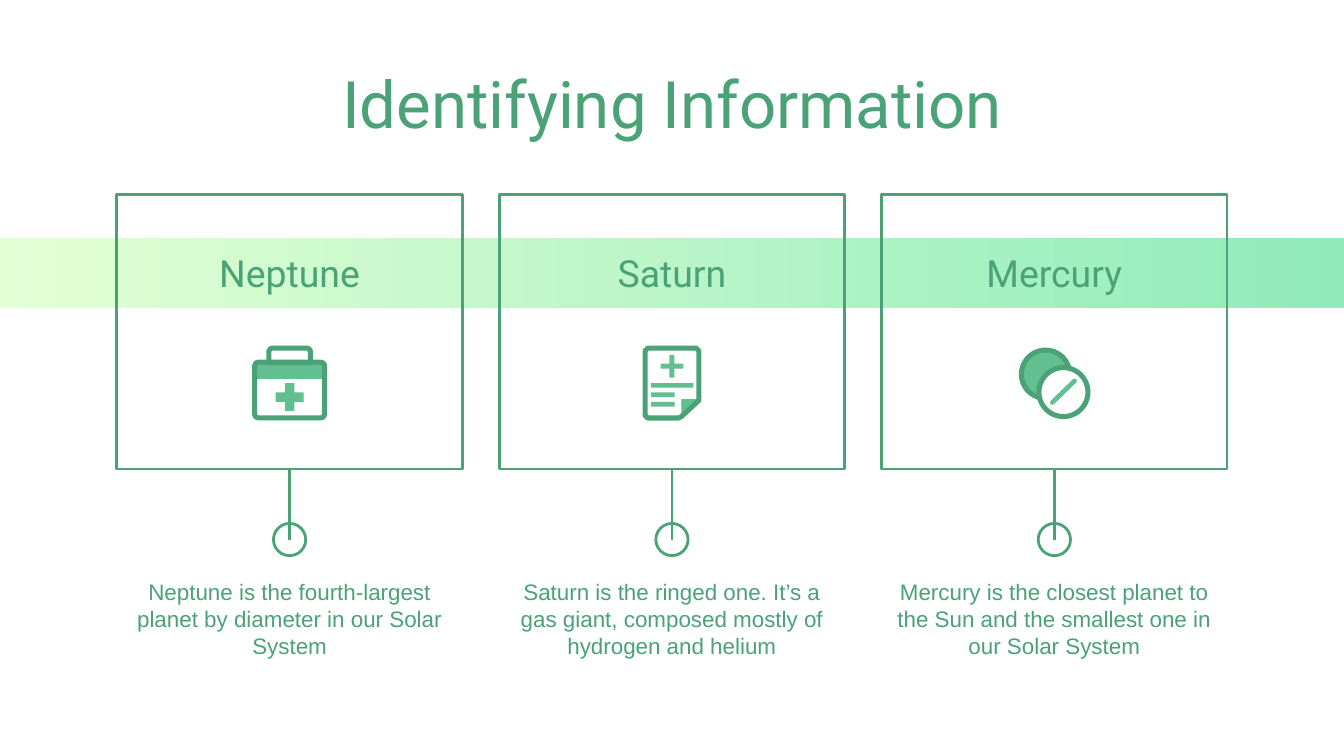
"""Build the Identifying Information slide on a grid of 1000 columns."""
from typing import NamedTuple, Optional

from lxml import etree
from pptx import Presentation
from pptx.dml.color import RGBColor
from pptx.enum.shapes import MSO_CONNECTOR, MSO_SHAPE
from pptx.enum.text import MSO_ANCHOR, PP_ALIGN
from pptx.oxml.ns import qn
from pptx.shapes.autoshape import Shape
from pptx.shapes.shapetree import SlideShapes
from pptx.util import Inches, Pt

DARK = RGBColor(0x4A, 0xA2, 0x76)
MID = RGBColor(0x62, 0xC0, 0x90)
PALE = RGBColor(0xE3, 0xFF, 0xD5)
MINT = RGBColor(0x90, 0xEB, 0xBA)
WHITE = RGBColor(0xFF, 0xFF, 0xFF)

RECT = MSO_SHAPE.RECTANGLE
OVAL = MSO_SHAPE.OVAL
ROUND = MSO_SHAPE.ROUNDED_RECTANGLE
ARCH = MSO_SHAPE.ROUND_2_SAME_RECTANGLE
CROSS = MSO_SHAPE.CROSS
STRAIGHT = MSO_CONNECTOR.STRAIGHT
MIDDLE = MSO_ANCHOR.MIDDLE
CENTER = PP_ALIGN.CENTER

UNIT = Inches(0.01)
WIDE, HIGH = 1000, 562.5
CARD, STEP = 257, 284.5
THIN, THICK = 1.5, 2.7


class Box(NamedTuple):
    """A place on the grid: left, top, width and height."""
    x: float
    y: float
    w: float
    h: float


class Planet(NamedTuple):
    """The heading and text of one card."""
    name: str
    text: str


PLANETS = [
    Planet("Neptune", "Neptune is the fourth-largest planet by diameter in our Solar System"),
    Planet("Saturn", "Saturn is the ringed one. It’s a gas giant, composed mostly of hydrogen and helium"),
    Planet("Mercury", "Mercury is the closest planet to the Sun and the smallest one in our Solar System"),
]


def units(*sides: float) -> list[int]:
    """Turn grid units into slide lengths."""
    return [round(side * UNIT) for side in sides]


def paint(shape: Shape, fill: Optional[RGBColor], line: Optional[RGBColor], width: float) -> None:
    """Set the fill and line of a shape, and drop its shadow."""
    shape.shadow.inherit = False
    if fill is None:
        shape.fill.background()
    else:
        shape.fill.solid()
        shape.fill.fore_color.rgb = fill
    if line is None:
        shape.line.fill.background()
    else:
        shape.line.color.rgb = line
        shape.line.width = Pt(width)


def draw(shapes: SlideShapes, kind: MSO_SHAPE, box: Box, fill: Optional[RGBColor] = None,
         line: Optional[RGBColor] = None, width: float = THIN, bend: Optional[float] = None) -> Shape:
    """Draw a preset shape."""
    shape = shapes.add_shape(kind, *units(*box))
    paint(shape, fill, line, width)
    if bend is not None:
        shape.adjustments[0] = bend
    return shape


def trace(shapes: SlideShapes, points: list[tuple[float, float]], fill: Optional[RGBColor] = None,
          line: Optional[RGBColor] = None) -> None:
    """Draw a closed outline through points."""
    pen = shapes.build_freeform(*points[0], scale=UNIT)
    pen.add_line_segments(points[1:], close=True)
    paint(pen.convert_to_shape(), fill, line, THICK)


def link(shapes: SlideShapes, start: tuple[float, float], end: tuple[float, float],
         color: RGBColor, width: float, cap: str = "flat") -> None:
    """Draw a straight line."""
    line = shapes.add_connector(STRAIGHT, *units(*start, *end))
    line.line.color.rgb = color
    line.line.width = Pt(width)
    props = line._element.spPr
    props.find(qn("a:ln")).set("cap", cap)
    etree.SubElement(props, qn("a:effectLst"))


def write(shapes: SlideShapes, box: Box, text: str, font: str, size: float) -> None:
    """Add a centred text box."""
    frame = shapes.add_textbox(*units(*box)).text_frame
    frame.word_wrap = True
    frame.vertical_anchor = MIDDLE
    frame.margin_left = frame.margin_right = frame.margin_top = frame.margin_bottom = Inches(0.1)
    line = frame.paragraphs[0]
    line.text = text
    line.alignment = CENTER
    line.font.name = font
    line.font.size = Pt(size)
    line.font.color.rgb = DARK


def kit(shapes: SlideShapes, mid: float) -> None:
    """Draw the first aid kit."""
    draw(shapes, RECT, Box(mid - 26, 270, 52, 12), MID)
    draw(shapes, ARCH, Box(mid - 15.5, 259, 31, 11), None, DARK, THICK, 0.25)
    draw(shapes, ROUND, Box(mid - 26, 269.5, 52, 41.5), None, DARK, THICK, 0.07)
    draw(shapes, CROSS, Box(mid - 10.5, 285, 21, 21), MID, bend=0.33)


def sheet(shapes: SlideShapes, mid: float) -> None:
    """Draw the medical report."""
    left, right, top, base = mid - 20.5, mid + 20.5, 259, 311
    trace(shapes, [(mid + 7, 297), (right, 297), (mid + 7, 311)], MID)
    trace(shapes, [(mid + 9, 297), (mid + 11, 297), (mid + 7, 301), (mid + 7, 299)], MID)
    trace(shapes, [(left + 2, top), (right - 2, top), (right, top + 2), (right, 296), (right - 1, 298),
                   (mid + 7, base - 1), (mid + 5, base), (left + 2, base), (left, base - 2),
                   (left, top + 2)], None, DARK)
    for row, width in enumerate((31.5, 17.5, 17.5)):
        draw(shapes, RECT, Box(mid - 15.5, 285 + 7 * row, width, 3.5), MID)
    draw(shapes, CROSS, Box(mid - 8.5, 264, 17, 17), MID, bend=0.39)


def pills(shapes: SlideShapes, mid: float) -> None:
    """Draw the two round tablets."""
    draw(shapes, OVAL, Box(mid - 24.5, 260.5, 36, 36), MID, DARK, THICK)
    draw(shapes, OVAL, Box(mid - 11.5, 273.5, 36.5, 36.5), WHITE, DARK, THICK)
    link(shapes, (mid - 1.5, 299.5), (mid + 15, 283.5), MID, 2.5, "rnd")


def main() -> None:
    """Build and save the slide."""
    deck = Presentation()
    deck.slide_width, deck.slide_height = units(WIDE, HIGH)
    shapes = deck.slides.add_slide(deck.slide_layouts[6]).shapes

    band = draw(shapes, RECT, Box(-8, 177, WIDE + 16, 52), WHITE)
    band.fill.gradient()
    band.fill.gradient_angle = 0
    for stop, color in zip(band.fill.gradient_stops, (PALE, MINT)):
        stop.color.rgb = color

    write(shapes, Box(79, 59, 843, 35), "Identifying Information", "Roboto", 35)
    for col, (planet, icon) in enumerate(zip(PLANETS, (kit, sheet, pills))):
        mid = WIDE / 2 + (col - 1) * STEP
        left = mid - CARD / 2
        draw(shapes, RECT, Box(left, 145, CARD, 204), None, DARK)
        draw(shapes, OVAL, Box(mid - 12, 389.5, 24, 24), None, DARK)
        link(shapes, (mid, 348), (mid, 402), DARK, THIN)
        write(shapes, Box(left, 177, CARD, 52), planet.name, "Roboto", 20)
        write(shapes, Box(left, 417, CARD, 87), planet.text, "Arial", 12)
        icon(shapes, mid)

    deck.save("out.pptx")


if __name__ == "__main__":
    main()
